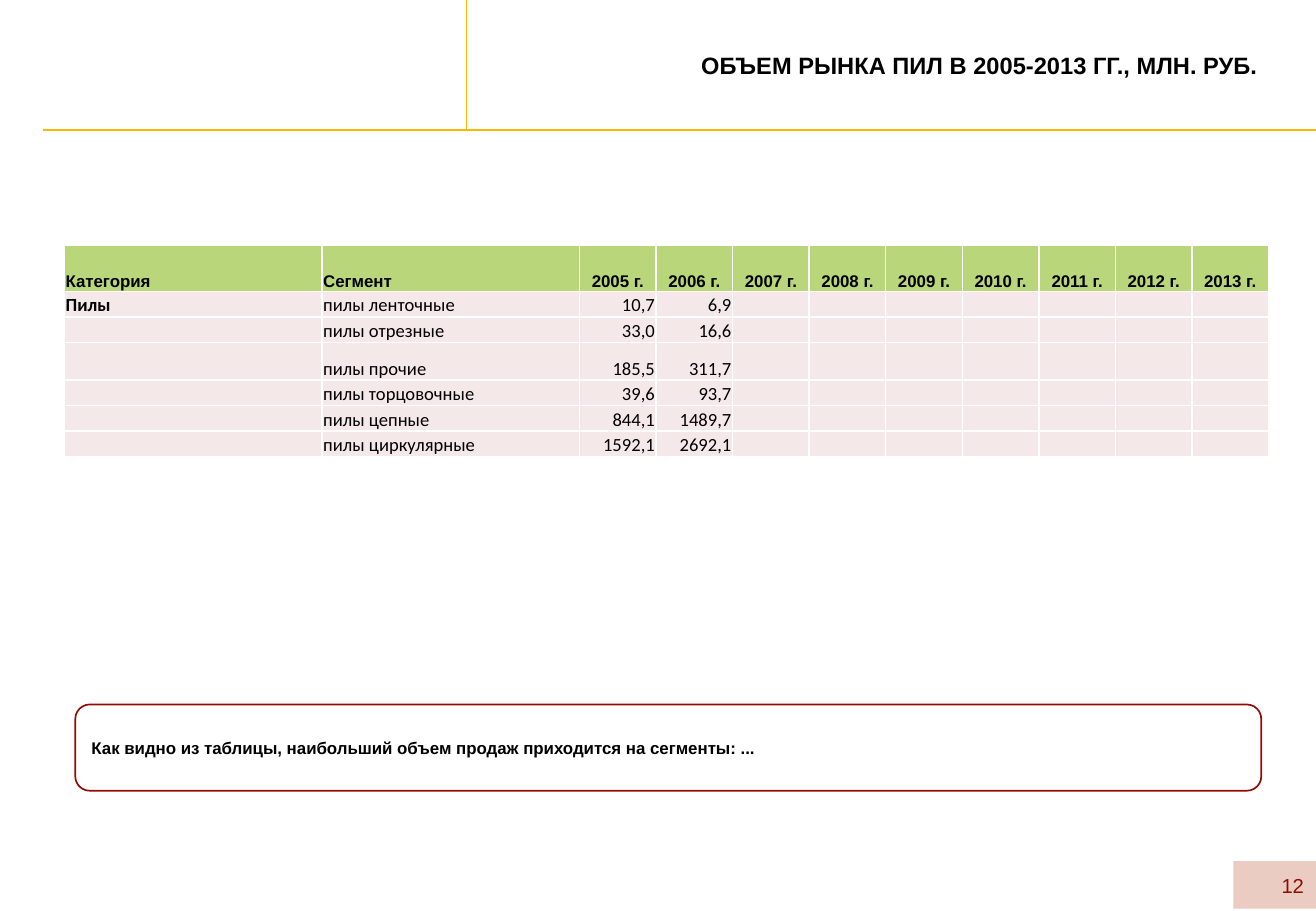
from lxml import etree
from pptx import Presentation
from pptx.dml.color import RGBColor
from pptx.enum.shapes import MSO_CONNECTOR, MSO_SHAPE
from pptx.enum.text import MSO_ANCHOR, PP_ALIGN
from pptx.oxml.ns import qn
from pptx.util import Inches, Pt

LEFT, MID, RIGHT, JUST = PP_ALIGN.LEFT, PP_ALIGN.CENTER, PP_ALIGN.RIGHT, PP_ALIGN.JUSTIFY
CENTER, BOTTOM = MSO_ANCHOR.MIDDLE, MSO_ANCHOR.BOTTOM
RECT, ROUND = MSO_SHAPE.RECTANGLE, MSO_SHAPE.ROUNDED_RECTANGLE
STRAIGHT = MSO_CONNECTOR.STRAIGHT
COLORS = {
    "black": "000000", "white": "FFFFFF", "gold": "FEB604", "red": "900B04",
    "pink": "EACCC3", "green": "B9D77A", "pale": "F5E8E8",
}


def color(name):
    return RGBColor.from_string(COLORS[name])


def write(frame, text, size, align, bold=True, tint="black", face="Arial"):
    para = frame.paragraphs[0]
    para.alignment = align
    run = para.add_run()
    run.text = text
    run.font.size = Pt(size)
    run.font.name = face
    run.font.bold = bold
    run.font.color.rgb = color(tint)


prs = Presentation()
prs.slide_width, prs.slide_height = Inches(10.83), Inches(7.5)
slide = prs.slides.add_slide(prs.slide_layouts[5])
shapes = slide.shapes

tab = shapes.add_shape(RECT, Inches(10.15), Inches(7.09), Inches(0.68), Inches(0.39))
tab.shadow.inherit = False
tab.fill.solid()
tab.fill.fore_color.rgb = color("pink")
tab.line.fill.background()

for x1, y1, x2, y2, width in [(0.35, 1.07, 10.86, 1.07, 1), (3.84, 1.07, 3.84, 0, 0.75)]:
    rule = shapes.add_connector(STRAIGHT, Inches(x1), Inches(y1), Inches(x2), Inches(y2))
    rule.line.color.rgb = color("gold")
    rule.line.width = Pt(width)
    etree.SubElement(rule._element.spPr, qn("a:effectLst"))

number = shapes.add_textbox(Inches(8.3), Inches(7.09), Inches(2.53), Inches(0.4))
number.text_frame.word_wrap = True
number.text_frame.vertical_anchor = CENTER
write(number.text_frame, "12", 12, RIGHT, False, "red")

title = shapes.title
title.left, title.top = Inches(3.84), Inches(0)
title.width, title.height = Inches(6.61), Inches(1.07)
title.text_frame.vertical_anchor = CENTER
write(title.text_frame, "ОБЪЕМ РЫНКА ПИЛ В 2005-2013 ГГ., МЛН. РУБ.", 14, RIGHT)

years = [f"{year} г." for year in range(2005, 2014)]
rows = [
    ["Категория", "Сегмент"] + years,
    ["Пилы", "пилы ленточные", "10,7", "6,9"],
    ["", "пилы отрезные", "33,0", "16,6"],
    ["", "пилы прочие", "185,5", "311,7"],
    ["", "пилы торцовочные", "39,6", "93,7"],
    ["", "пилы цепные", "844,1", "1489,7"],
    ["", "пилы циркулярные", "1592,1", "2692,1"],
]
widths = [2.12] * 2 + [0.63] * len(years)
heights = [0.38, 0.21, 0.21, 0.31, 0.21, 0.21, 0.21]
table = shapes.add_table(
    len(rows), len(widths), Inches(0.53), Inches(2.02), Inches(9.92), Inches(1.73)
).table
for col, width in zip(table.columns, widths):
    col.width = Inches(width)
for row, height in zip(table.rows, heights):
    row.height = Inches(height)

for r, row in enumerate(rows):
    head = r == 0
    for c in range(len(widths)):
        cell = table.cell(r, c)
        cell.vertical_anchor = BOTTOM
        cell.margin_left = cell.margin_right = cell.margin_top = Inches(0.01)
        cell.margin_bottom = 0
        props = cell._tc.get_or_add_tcPr()
        for side in ("a:lnL", "a:lnR", "a:lnT", "a:lnB"):
            edge = etree.SubElement(props, qn(side), w=str(Pt(1)))
            paint = etree.SubElement(edge, qn("a:solidFill"))
            etree.SubElement(paint, qn("a:srgbClr"), val=COLORS["white"])
        cell.fill.solid()
        cell.fill.fore_color.rgb = color("green" if head else "pale")
        text = row[c] if c < len(row) else ""
        if text:
            align = LEFT if c < 2 else MID if head else RIGHT
            size, face = (10, "Arial") if head else (11, "Calibri")
            write(cell.text_frame, text, size, align, head or c == 0, face=face)
        else:
            para = cell.text_frame.paragraphs[0]
            etree.SubElement(para._p, qn("a:endParaRPr"), sz="1100")

note = shapes.add_shape(ROUND, Inches(0.62), Inches(5.8), Inches(9.76), Inches(0.71))
note.shadow.inherit = False
note.fill.background()
note.line.color.rgb = color("red")
note.line.width = Pt(1)
note.text_frame.word_wrap = True
note.text_frame.vertical_anchor = CENTER
write(
    note.text_frame,
    "Как видно из таблицы, наибольший объем продаж приходится на сегменты: ...",
    10, JUST,
)

prs.save("out.pptx")
